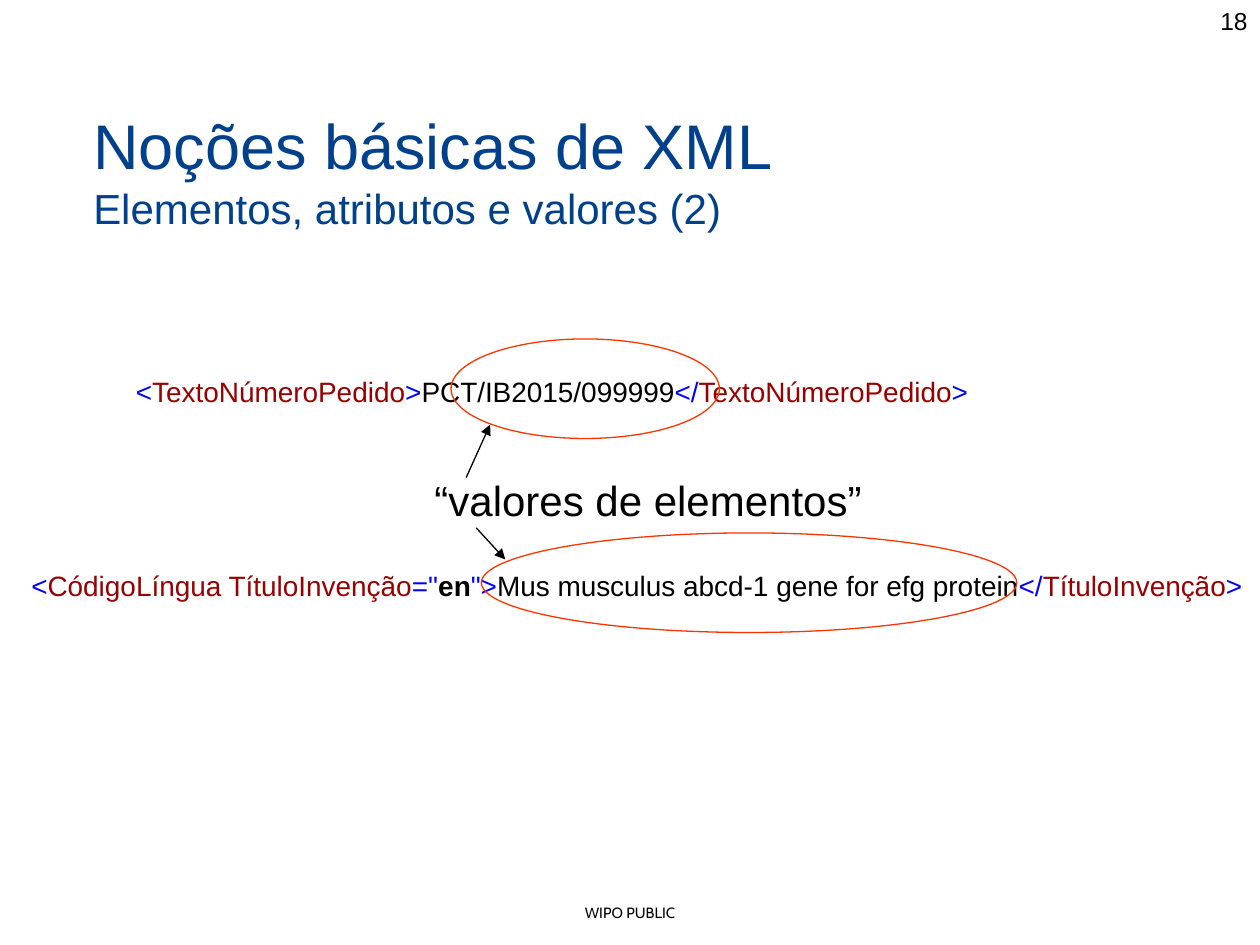
from pptx import Presentation
from pptx.dml.color import RGBColor
from pptx.enum.shapes import MSO_CONNECTOR, MSO_SHAPE
from pptx.enum.text import MSO_ANCHOR, PP_ALIGN
from pptx.oxml.ns import qn
from pptx.util import Inches, Pt
from lxml import etree

LEFT, CENTER, RIGHT = PP_ALIGN.LEFT, PP_ALIGN.CENTER, PP_ALIGN.RIGHT
MIDDLE = MSO_ANCHOR.MIDDLE
OVAL = MSO_SHAPE.OVAL
STRAIGHT = MSO_CONNECTOR.STRAIGHT
BLACK = RGBColor(0x00, 0x00, 0x00)
BLUE = RGBColor(0x00, 0x00, 0xFF)
MAROON = RGBColor(0x99, 0x00, 0x00)
ORANGE = RGBColor(0xFF, 0x33, 0x00)
NAVY = RGBColor(0x00, 0x40, 0x8C)


def add_run(para, text, color, size, name="Arial", bold=False):
    run = para.add_run()
    run.text = text
    style = {"name": name, "size": Pt(size), "bold": bold}
    for key, value in style.items():
        setattr(run.font, key, value)
    run.font.color.rgb = color


def add_text(slide, box, runs, size, align=LEFT, wrap=False, name="Arial"):
    frame = slide.shapes.add_textbox(*map(Inches, box)).text_frame
    frame.word_wrap = wrap
    para = frame.paragraphs[0]
    para.alignment = align
    for text, color, *bold in runs:
        add_run(para, text, color, size, name, bool(bold))


def add_title(slide, box, lines):
    title = slide.shapes.title
    places = zip(("left", "top", "width", "height"), box)
    for key, value in places:
        setattr(title, key, Inches(value))
    frame = title.text_frame
    frame.vertical_anchor = MIDDLE
    for i, (text, size) in enumerate(lines):
        para = frame.add_paragraph() if i else frame.paragraphs[0]
        para.alignment = LEFT
        add_run(para, text, NAVY, size)


def add_ring(slide, box):
    ring = slide.shapes.add_shape(OVAL, *map(Inches, box))
    ring.shadow.inherit = False
    ring.fill.background()
    ring.line.color.rgb = ORANGE
    ring.line.width = Pt(0.75)


def add_arrow(slide, ends):
    arrow = slide.shapes.add_connector(STRAIGHT, *map(Inches, ends))
    arrow.line.color.rgb = BLACK
    arrow.line.width = Pt(0.75)
    line = arrow.line._get_or_add_ln()
    etree.SubElement(line, qn("a:tailEnd"), type="triangle")
    etree.SubElement(arrow._element.spPr, qn("a:effectLst"))


def main():
    deck = Presentation()
    deck.slide_width, deck.slide_height = Inches(10), Inches(7.5)
    slide = deck.slides.add_slide(deck.slide_layouts[5])

    add_title(slide, (0.64, 0.72, 9, 1.25), [
        ("Noções básicas de XML", 36),
        ("Elementos, atributos e valores (2)", 24),
    ])
    add_text(slide, (0, 7.12, 10, 0.24), [("WIPO PUBLIC", BLACK)], 8.5,
             CENTER, True, "Cabin")
    add_text(slide, (7.67, 0, 2.33, 0.52), [("18", BLACK)], 14, RIGHT, True)

    add_text(slide, (0.98, 2.92, 6.94, 0.37), [
        ("<", BLUE), ("TextoNúmeroPedido", MAROON), (">", BLUE),
        ("PCT/IB2015/099999", BLACK),
        ("</", BLUE), ("TextoNúmeroPedido", MAROON), (">", BLUE),
    ], 16)
    add_text(slide, (0.15, 4.46, 10.16, 0.37), [
        ("<", BLUE), ("CódigoLíngua TítuloInvenção", MAROON), ('="', BLUE),
        ("en", BLACK, True), ('">', BLUE),
        ("Mus musculus abcd-1 gene for efg protein", BLACK),
        ("</", BLUE), ("TítuloInvenção", MAROON), (">", BLUE),
    ], 16)
    add_text(slide, (3.35, 3.72, 3.63, 0.5),
             [("“valores de elementos”", BLACK)], 24)

    for box in ((3.58, 2.69, 2.13, 0.79), (3.82, 4.23, 4.25, 0.79)):
        add_ring(slide, box)
    for ends in ((3.78, 4.19, 4.01, 4.44), (3.7, 3.79, 3.89, 3.37)):
        add_arrow(slide, ends)

    deck.save("out.pptx")


if __name__ == "__main__":
    main()
